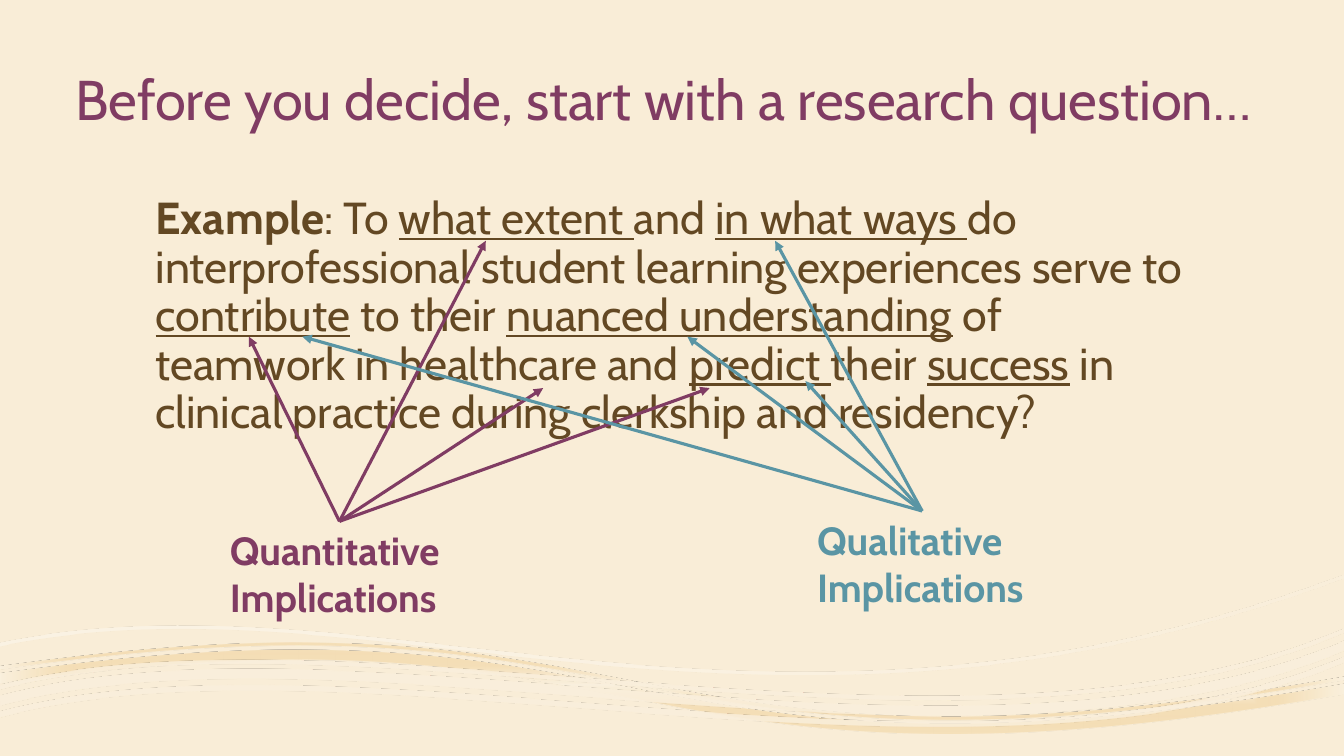
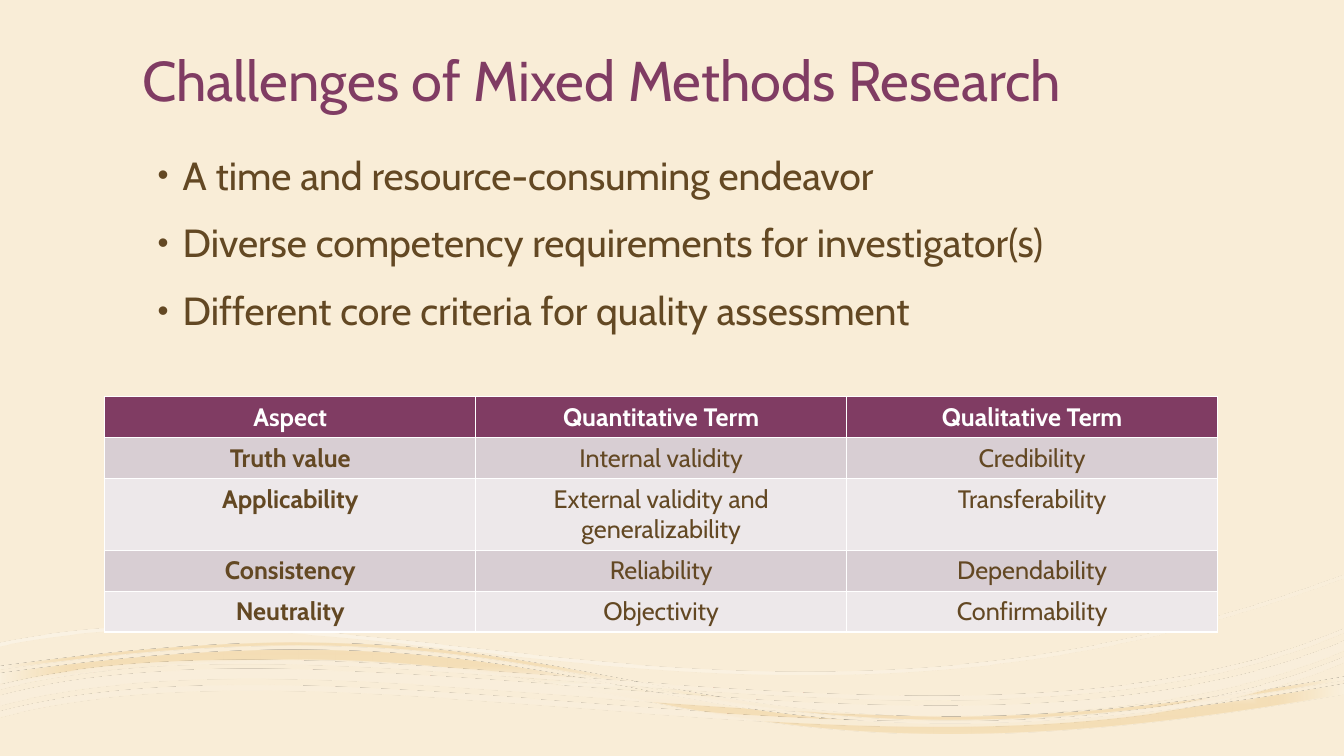
"""Build two slides on research questions and mixed methods."""
import math
import pptx
import pptx.util
import pptx.dml.color
import pptx.enum.shapes
import pptx.enum.text
import pptx.oxml
import pptx.oxml.ns

Pt = pptx.util.Pt
FONT = "Cabin"
TILT = 3.5
HEX = {
    "sand": "F9EDD7", "plum": "803C63", "brown": "634823", "teal": "5A95A4",
    "white": "FFFFFF", "band": "D8CED3", "pale": "EDE8EA",
    "cream": "FAF1DF", "gold": "F4DEB7", "honey": "F4DDB3", "milk": "FAEFDC",
}
NS = pptx.oxml.ns.nsdecls("a")
qn = pptx.oxml.ns.qn
GOLD_TOP = [(0, 481), (89.3, 468.7), (159.8, 463.7), (220.3, 464.4),
            (482.4, 465.8), (531.4, 563), (960, 488.2)]
GOLD_LOW = [(0, 488.2), (480.2, 419.8), (433.4, 587.5), (960, 495.4)]
HIGH = [(0, 458.6), (268.6, 402.5), (542.9, 564.5), (960, 410.4)]
DEEP = [(0, 508.3), (251.3, 440.6), (687.6, 583.2), (960, 469.4)]
THIN = [(0, 489.6), (252.7, 424.1), (689.8, 565.9), (960, 449.3)]

QUERY = [": To ", "what extent ", "and ", "in what ways ",
         "do interprofessional student learning experiences serve to ",
         "contribute", " to their ", "nuanced understanding",
         " of teamwork in healthcare and ", "predict ", "their ", "success",
         " in clinical practice during clerkship and residency?"]
ISSUES = ["A time and resource-consuming endeavor",
          "Diverse competency requirements for investigator(s)",
          "Different core criteria for quality assessment"]
TERMS = [["Aspect", "Quantitative Term", "Qualitative Term"],
         ["Truth value", "Internal validity", "Credibility"],
         ["Applicability", "External validity and generalizability", "Transferability"],
         ["Consistency", "Reliability", "Dependability"],
         ["Neutrality", "Objectivity", "Confirmability"]]


def rgb(name):
    """Return the named colour."""
    return pptx.dml.color.RGBColor.from_string(HEX[name])


def xml(tag, attrs="", inside=""):
    """Return an element of the drawing namespace."""
    return pptx.oxml.parse_xml(f"<a:{tag} {NS} {attrs}>{inside}</a:{tag}>")


def style(para, size, tint, bold=False):
    """Format each run of a paragraph."""
    for run in para.runs:
        run.font.name, run.font.size = FONT, Pt(size)
        run.font.color.rgb = rgb(tint)
        run.font.bold = bold


def place(shape, box):
    """Move a shape to a box given in points."""
    shape.left, shape.top, shape.width, shape.height = map(Pt, box)


def shift(curve, drop):
    """Return a curve moved down."""
    return [(x, y + drop) for x, y in curve]


def level(curve, box):
    """Turn a curve about the centre of its box, to undo the tilt."""
    left, top, width, height = box
    mid, row = left + width / 2, top + height / 2
    cos, sin = math.cos(math.radians(TILT)), math.sin(math.radians(TILT))
    return [(Pt(mid + (x - mid) * cos - (y - row) * sin),
             Pt(row + (x - mid) * sin + (y - row) * cos)) for x, y in curve]


def bend(outline, edges):
    """Turn the edges of an outline from segments into cubic curves."""
    lines = iter(list(outline.iter(qn("a:lnTo"))))
    for top, low in edges:
        for edge in (top, low):
            if edge is low:
                next(lines)
            for _ in range(len(edge) // 3):
                trio = [next(lines) for _ in range(3)]
                curve = xml("cubicBezTo")
                trio[0].addprevious(curve)
                for line in trio:
                    curve.append(line[0])
                    outline.remove(line)


def ribbon(group, box, edges, stops, course):
    """Draw tilted ribbons between pairs of edges in a box."""
    pen = None
    for top, low in edges:
        loop = level(top + low[::-1], box)
        if pen is None:
            pen = group.shapes.build_freeform(*loop[0])
        else:
            pen.move_to(*loop[0])
        pen.add_line_segments(loop[1:], close=True)
    shape = pen.convert_to_shape()
    props = shape.element.spPr
    outline = next(props.iter(qn("a:path")))
    bend(outline, edges)
    left, top = shape.left, shape.top
    place(shape, box)
    for spot in outline.iter(qn("a:pt")):
        spot.set("x", str(int(spot.get("x")) + left - shape.left))
        spot.set("y", str(int(spot.get("y")) + top - shape.top))
    outline.set("w", str(shape.width))
    outline.set("h", str(shape.height))
    shape.rotation = 360 - TILT
    shape.shadow.inherit = False
    shape.line.fill.background()
    shape.fill.gradient()
    marks = "".join(
        f'<a:gs pos="{spot * 1000}"><a:srgbClr val="{HEX[tint]}">'
        f'<a:alpha val="{alpha * 1000}"/></a:srgbClr></a:gs>'
        for spot, tint, alpha in stops)
    props.replace(props.find(qn("a:gradFill")),
                  xml("gradFill", 'rotWithShape="1"', f"<a:gsLst>{marks}</a:gsLst>{course}"))


def focus(kind, left, top, right, low):
    """Return the course of a gradient that runs from a focus."""
    return (f'<a:path path="{kind}"><a:fillToRect l="{left}000" t="{top}000" '
            f'r="{right}000" b="{low}000"/></a:path>')


def waves(deck, slide):
    """Give the master its ground colour and waves."""
    master = deck.slide_master
    master.background.fill.solid()
    master.background.fill.fore_color.rgb = rgb("sand")
    group = slide.shapes.add_group_shape()
    ribbon(group, (0.7, 440.6, 958.3, 97.2),
           [(GOLD_TOP, GOLD_LOW), (shift(GOLD_TOP, -5), shift(GOLD_LOW, -10))],
           [(0, "cream", 90), (18, "gold", 100), (37, "honey", 90), (100, "cream", 100)],
           focus("shape", 50, 50, 50, 50))
    ribbon(group, (2.2, 423.4, 961.2, 123.1), [(HIGH, shift(HIGH, 2.5))],
           [(36, "white", 30), (100, "sand", 48)], '<a:lin ang="2700000" scaled="0"/>')
    ribbon(group, (-0.7, 450, 961.9, 82.8),
           [(DEEP, shift(DEEP, 4)), (shift(DEEP, -11.2), shift(DEEP, -4.3)),
            (THIN, shift(THIN, 2.9))],
           [(36, "white", 47), (100, "milk", 82)], focus("rect", 100, 100, 0, 0))
    master.shapes.element.insert(2, group.element)


def title(slide, text, box):
    """Set the slide title."""
    shape = slide.shapes.title
    place(shape, box)
    frame = shape.text_frame
    frame.text = text
    frame.auto_size = pptx.enum.text.MSO_AUTO_SIZE.NONE
    frame.vertical_anchor = pptx.enum.text.MSO_ANCHOR.BOTTOM
    para = frame.paragraphs[0]
    para.alignment = pptx.enum.text.PP_ALIGN.LEFT
    para.line_spacing = 0.9
    style(para, 40, "plum")


def body(slide, box):
    """Place the body and return its text frame."""
    shape = slide.placeholders[1]
    place(shape, box)
    shape.text_frame.auto_size = pptx.enum.text.MSO_AUTO_SIZE.NONE
    return shape.text_frame


def space(para, left, hang, marks):
    """Set spacing, indent and bullet of a body paragraph."""
    para.line_spacing, para.space_before = 0.9, Pt(18)
    props = para._p.get_or_add_pPr()
    props.set("marL", str(Pt(left)))
    props.set("indent", str(Pt(hang)))
    for tag, attrs in marks:
        props.append(xml(tag, attrs))


def query(slide, box):
    """Write the example question with its key words underlined."""
    para = body(slide, box).paragraphs[0]
    for text in ["Example"] + QUERY:
        para.add_run().text = text
    style(para, 32, "brown")
    para.runs[0].font.bold = True
    for run in para.runs[2::2]:
        run.font.underline = True
    space(para, 3.6, 0, [("buNone", "")])


def issues(slide, box):
    """Write the bullet list."""
    frame = body(slide, box)
    frame.text = "\n".join(ISSUES)
    for para in frame.paragraphs:
        style(para, 28, "brown")
        space(para, 21.6, -18, [("buSzPct", 'val="80000"'),
                                ("buFont", 'typeface="Arial"'),
                                ("buChar", 'char="•"')])


def fan(slide, text, tint, box, tips):
    """Draw a label with arrows from its top centre to the tips."""
    group = slide.shapes.add_group_shape()
    frame = group.shapes.add_textbox(*map(Pt, box)).text_frame
    frame.text = text
    frame.word_wrap = False
    frame.auto_size = pptx.enum.text.MSO_AUTO_SIZE.SHAPE_TO_FIT_TEXT
    for para in frame.paragraphs:
        style(para, 28, tint, True)
    left, top, width, _ = box
    for tip in tips:
        arrow = group.shapes.add_connector(
            pptx.enum.shapes.MSO_CONNECTOR.STRAIGHT,
            *map(Pt, (left + width / 2, top, *tip)))
        arrow.line.color.rgb = rgb(tint)
        arrow.line.width = Pt(2.25)
        props = arrow.element.spPr
        props.find(qn("a:ln")).append(xml("tailEnd", 'type="triangle"'))
        props.append(xml("effectLst"))


def terms(slide, box):
    """Draw the table of terms."""
    grid = slide.shapes.add_table(len(TERMS), len(TERMS[0]), *map(Pt, box)).table
    for r, line in enumerate(TERMS):
        for c, text in enumerate(line):
            cell = grid.cell(r, c)
            cell.text = text
            para = cell.text_frame.paragraphs[0]
            para.alignment = pptx.enum.text.PP_ALIGN.CENTER
            style(para, 18, "brown" if r else "white", r == 0 or c == 0)
            cell.fill.solid()
            cell.fill.fore_color.rgb = rgb(("pale", "band")[r % 2] if r else "plum")


def ask(slide):
    """Build the research question slide."""
    title(slide, "Before you decide, start with a research question…", (46.4, 2, 864, 96))
    query(slide, (100.3, 136.5, 756, 198))
    fan(slide, "Quantitative\nImplications", "plum", (157.2, 372.4, 170.6, 74.9),
        [(347, 172), (388, 277.2), (506.9, 277.2), (177.8, 240.5)])
    fan(slide, "Qualitative\nImplications", "teal", (576.6, 365, 164.2, 74.9),
        [(553.7, 172), (491, 240.5), (575.3, 272.2), (216, 240.5)])


def weigh(slide):
    """Build the challenges slide."""
    title(slide, "Challenges of Mixed Methods Research", (94.3, -11.5, 756, 96))
    issues(slide, (101.7, 108, 756, 142.5))
    terms(slide, (74.8, 283.5, 795, 146))


def main():
    """Build and save the deck."""
    deck = pptx.Presentation()
    deck.slide_width, deck.slide_height = Pt(960), Pt(540)
    for build in (ask, weigh):
        slide = deck.slides.add_slide(deck.slide_layouts[1])
        build(slide)
    waves(deck, slide)
    deck.save("out.pptx")


if __name__ == "__main__":
    main()
